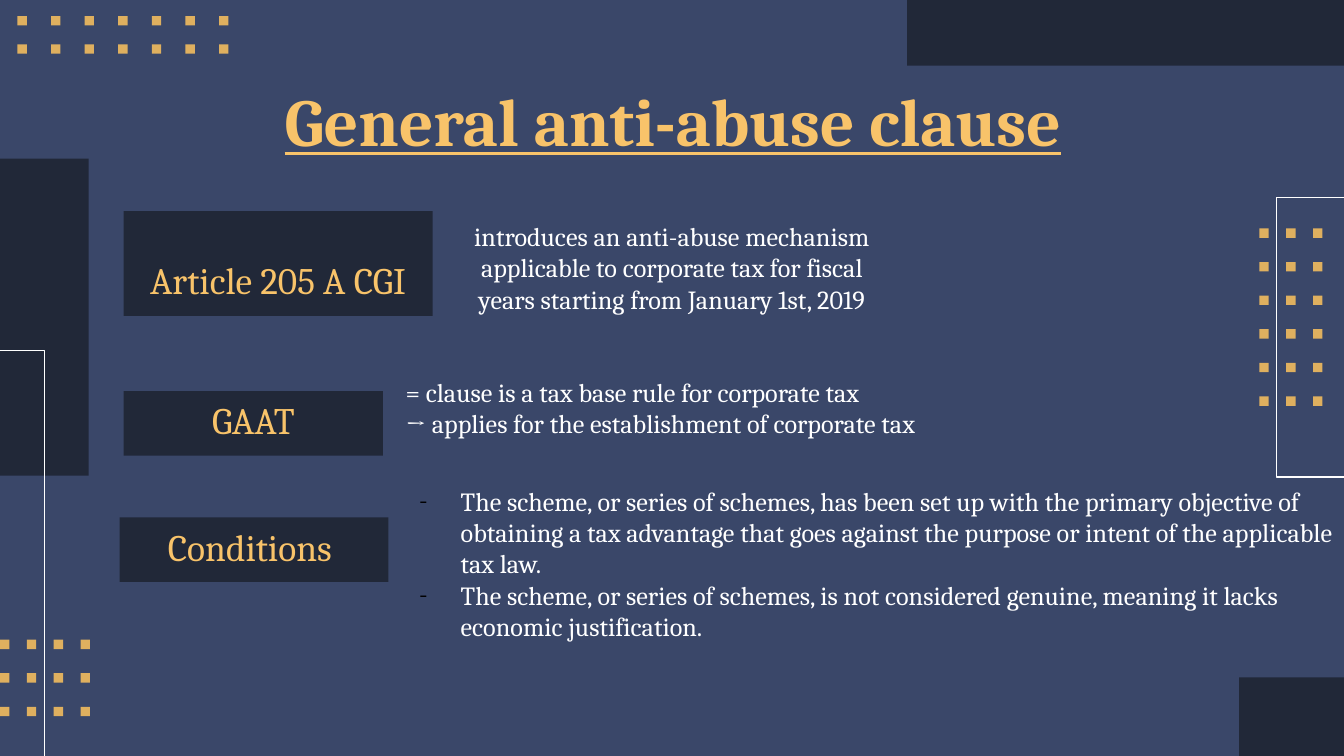
"""Build the slide on the general anti-abuse clause."""
from itertools import product

from lxml.etree import SubElement
from pptx import Presentation
from pptx.dml.color import RGBColor
from pptx.enum.shapes import MSO_SHAPE as Shape
from pptx.enum.text import MSO_ANCHOR as Anchor, MSO_AUTO_SIZE as AutoSize, PP_ALIGN as Align
from pptx.oxml.ns import qn
from pptx.util import Inches, Pt

NAVY = RGBColor(0x3A, 0x47, 0x69)
DARK = RGBColor(0x21, 0x28, 0x38)
GOLD = RGBColor(0xF8, 0xC3, 0x6A)
DOT_GOLD = RGBColor(0xDF, 0xB0, 0x5F)
WHITE = RGBColor(0xFF, 0xFF, 0xFF)
BLACK = RGBColor(0x00, 0x00, 0x00)


def add_block(left, top, width, height, color):
    block = slide.shapes.add_shape(
        Shape.RECTANGLE, Inches(left), Inches(top), Inches(width), Inches(height))
    block.shadow.inherit = False
    block.fill.solid()
    block.fill.fore_color.rgb = color
    block.line.fill.background()
    return block


def add_run(paragraph, text, size, color):
    run = paragraph.add_run()
    run.text = text
    run.font.name = "Cambria"
    run.font.size = Pt(size)
    run.font.color.rgb = color
    return run


presentation = Presentation()
presentation.slide_width = Inches(10)
presentation.slide_height = Inches(10) * 9 // 16
slide = presentation.slides.add_slide(presentation.slide_layouts[5])
slide.background.fill.solid()
slide.background.fill.fore_color.rgb = NAVY

for left, top, width, height in [
    (9.22, 5.04, 0.78, 0.59), (6.75, -0.07, 3.26, 0.56), (0, 1.18, 0.66, 2.36)
]:
    add_block(left, top, width, height, DARK)

for points in [
    [(10.13, 1.47), (9.5, 1.47), (9.5, 3.55), (10.13, 3.55)],
    [(0.33, 5.63), (0.33, 2.61), (0, 2.61)],
]:
    corners = [(Inches(x), Inches(y)) for x, y in points]
    builder = slide.shapes.build_freeform(*corners[0])
    builder.add_line_segments(corners[1:], close=False)
    frame = builder.convert_to_shape()
    frame.shadow.inherit = False
    frame.fill.background()
    frame.line.color.rgb = WHITE
    frame.line.width = Pt(0.75)

for left, top, columns, rows, column_step, row_step in [
    (0.13, 0.12, 7, 2, 0.25, 0.21),
    (9.37, 1.7, 3, 6, 0.2, 0.25),
    (0, 4.76, 4, 3, 0.2, 0.25),
]:
    for row, column in product(range(rows), range(columns)):
        add_block(left + column * column_step, top + row * row_step, 0.07, 0.07, DOT_GOLD)

title = slide.shapes.title
title.left, title.top = Inches(0.79), Inches(0.49)
title.width, title.height = Inches(8.43), Inches(0.63)
title_frame = title.text_frame
title_frame.auto_size = AutoSize.NONE
title_frame.vertical_anchor = Anchor.TOP
title_frame.margin_top = title_frame.margin_bottom = Inches(0.1)
title_frame.paragraphs[0].alignment = Align.CENTER
title_run = add_run(title_frame.paragraphs[0], "General anti-abuse clause", 36, GOLD)
title_run.font.bold = True
title_run.font.underline = True

for text, left, top, width, height in [
    ("Article 205 A CGI", 0.92, 1.57, 2.3, 0.78),
    ("GAAT", 0.92, 2.91, 1.93, 0.48),
    ("Conditions ", 0.89, 3.85, 2, 0.48),
]:
    label_frame = add_block(left, top, width, height, DARK).text_frame
    label_frame.word_wrap = True
    label_frame.vertical_anchor = Anchor.BOTTOM
    label_frame.margin_top = label_frame.margin_bottom = Inches(0.1)
    label_frame.paragraphs[0].alignment = Align.CENTER
    add_run(label_frame.paragraphs[0], text, 20, GOLD)

for left, top, width, height, margin, wrap, alignment, bulleted, lines in [
    (3.34, 1.54, 3.32, 1.05, 0.1, True, Align.CENTER, False, [
        "introduces an anti-abuse mechanism applicable to corporate tax for fiscal "
        "years starting from January 1st, 2019"]),
    (2.92, 2.75, 4.46, 0.57, 0.05, False, Align.LEFT, False, [
        "= clause is a tax base rule for corporate tax",
        "→ applies for the establishment of corporate tax"]),
    (3.02, 3.56, 7.27, 1.51, 0.05, True, Align.LEFT, True, [
        "The scheme, or series of schemes, has been set up with the primary objective of "
        "obtaining a tax advantage that goes against the purpose or intent of the "
        "applicable tax law.",
        "The scheme, or series of schemes, is not considered genuine, meaning it lacks "
        "economic justification."]),
]:
    text_box = slide.shapes.add_textbox(
        Inches(left), Inches(top), Inches(width), Inches(height))
    text_frame = text_box.text_frame
    text_frame.word_wrap = wrap
    text_frame.margin_top = text_frame.margin_bottom = Inches(margin)
    for index, line in enumerate(lines):
        paragraph = text_frame.add_paragraph() if index else text_frame.paragraphs[0]
        paragraph.alignment = alignment
        add_run(paragraph, line, 14, WHITE)
        if bulleted:
            properties = paragraph._p.get_or_add_pPr()
            properties.set("marL", str(Inches(0.31)))
            properties.set("indent", str(-Inches(0.31)))
            bullet_color = SubElement(properties, qn("a:buClr"))
            SubElement(bullet_color, qn("a:srgbClr"), val=str(BLACK))
            SubElement(properties, qn("a:buFont"), typeface="Cambria")
            SubElement(properties, qn("a:buChar"), char="-")

presentation.save("out.pptx")
